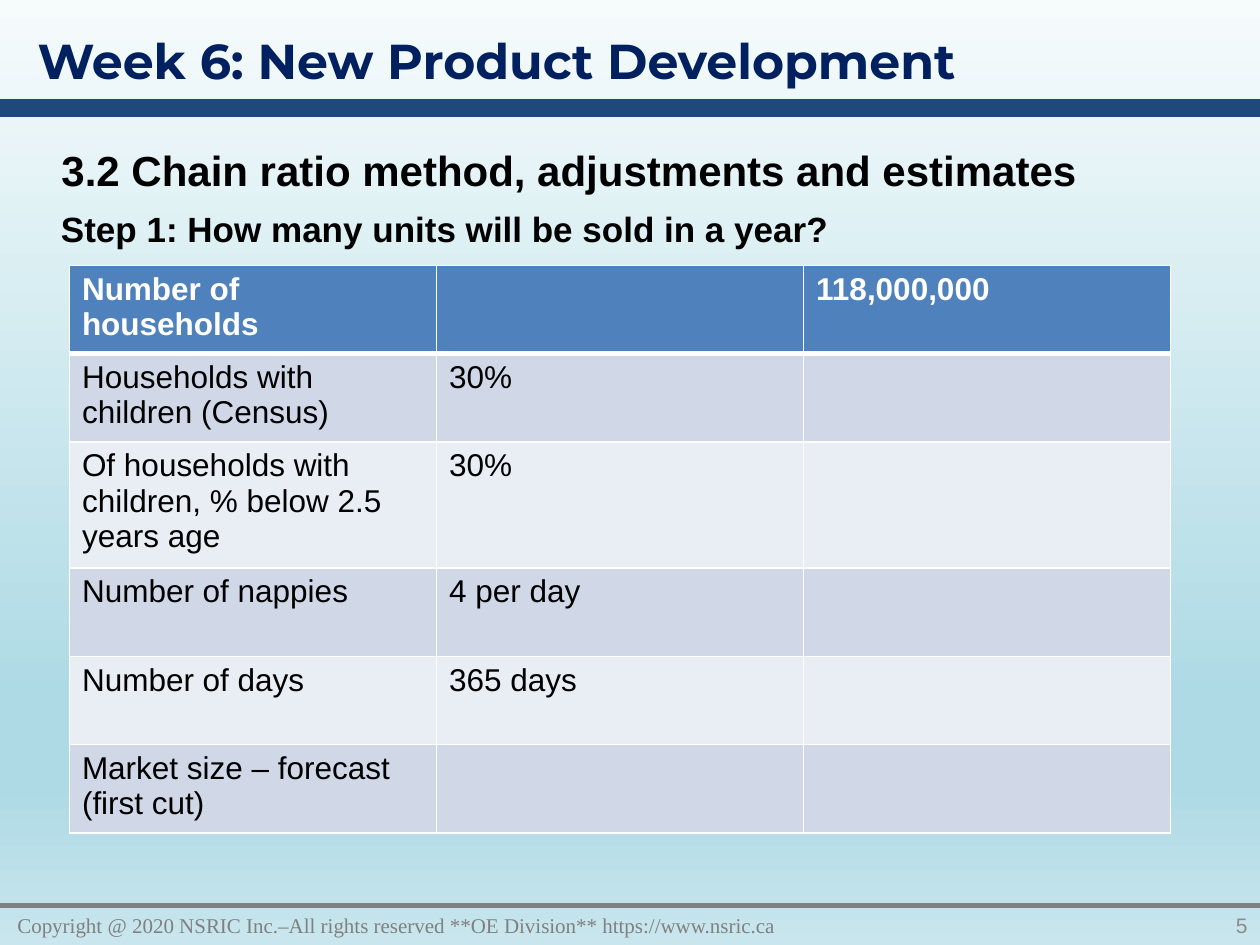
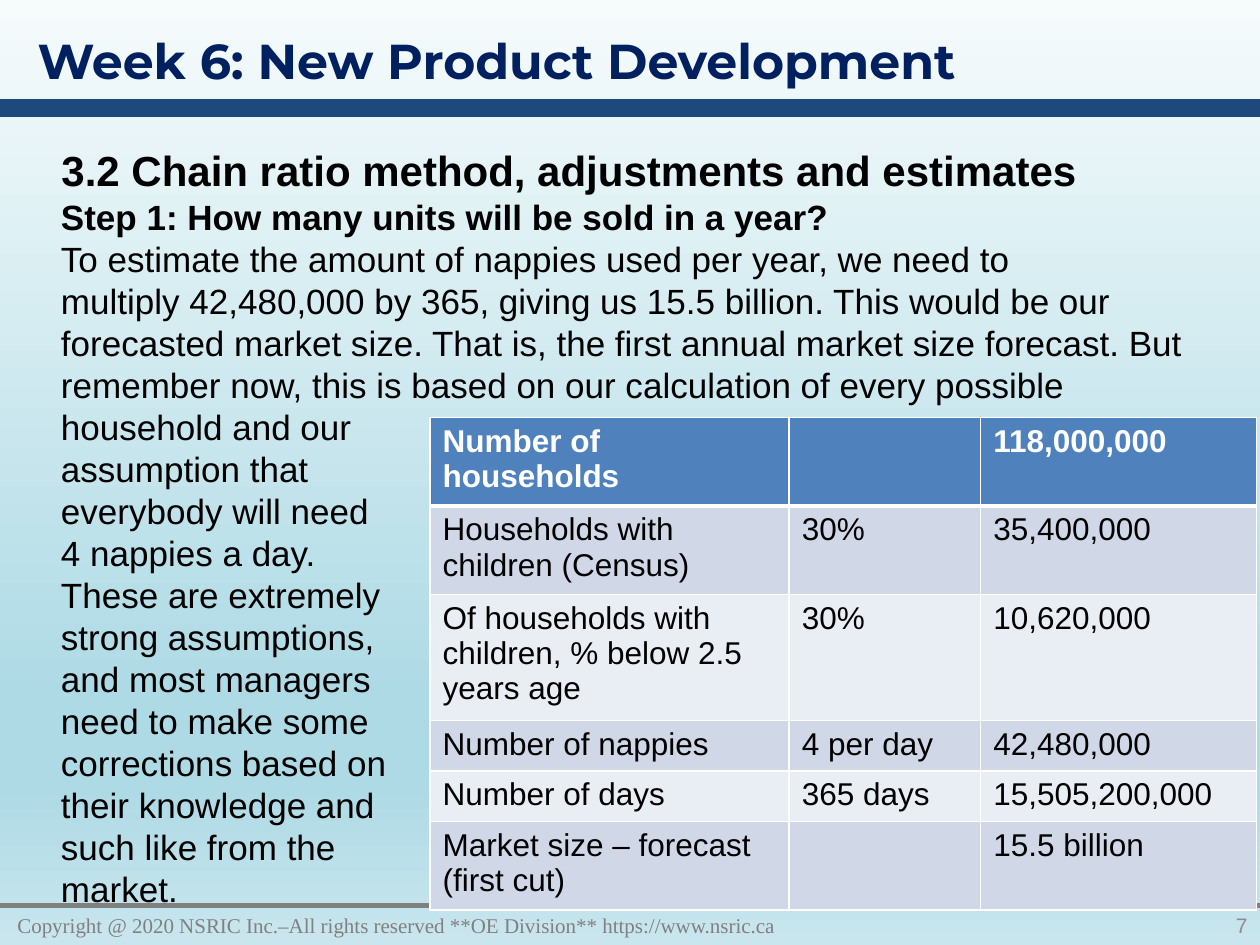
from lxml import etree
from pptx import Presentation
from pptx import util as u
from pptx.dml.color import RGBColor
from pptx.enum import shapes, text
from pptx.oxml import ns

HUES = {
    "navy": "002060", "band": "1F497D", "gray": "808080", "page": "8C8C8C",
    "black": "000000", "white": "FFFFFF", "head": "4F81BD",
    "odd": "D0D8E8", "even": "E9EDF4",
}
SKY = [(0, "F6FBFC"), (74, "AEDAE5"), (83, "AEDAE5"), (100, "C9E6EE")]
FORMS = {
    "title": {"name": "Montserrat", "size": u.Pt(28), "bold": True, "color": "navy"},
    "topic": {"name": "Arial", "size": u.Pt(24), "bold": True, "color": "black"},
    "step": {"name": "Arial", "size": u.Pt(20), "bold": True, "color": "black"},
    "body": {"name": "Arial", "size": u.Pt(20), "bold": False, "color": "black"},
    "head": {"name": "Arial", "size": u.Pt(18), "bold": True, "color": "white"},
    "cell": {"name": "Arial", "size": u.Pt(18), "bold": False, "color": "black"},
    "foot": {"name": "Times New Roman", "size": u.Pt(12), "color": "gray"},
    "page": {"name": "Arial", "size": u.Pt(12), "color": "page"},
}
LABELS = [
    "Number of households",
    "Households with children (Census)",
    "Of households with children, % below 2.5 years age",
    "Number of nappies",
    "Number of days",
    "Market size – forecast (first cut)",
]
RATES = ["", "30%", "30%", "4 per day", "365 days", ""]
TOTALS = ["118,000,000", "35,400,000", "10,620,000", "42,480,000",
          "15,505,200,000", "15.5 billion"]
STEP = "Step 1: How many units will be sold in a year?"
BOND = chr(160)
NOTES = [
    "To estimate the amount of nappies used per year, we need to "
    f"multiply{BOND}42,480,000 by 365, giving us 15.5 billion. This would be our "
    f"forecasted{BOND}market size. That is, the first annual market size forecast. "
    f"But remember{BOND}now, this is based on our calculation of every possible "
    "household and our",
    "assumption that",
    "everybody will need",
    "4 nappies a day.",
    "These are extremely",
    "strong assumptions,",
    "and most managers",
    "need to make some",
    "corrections based on",
    "their knowledge and",
    "such like from the",
    "market.",
]


def rgb(hue):
    return RGBColor.from_string(HUES[hue])


def add(node, tag, **attrs):
    return etree.SubElement(node, ns.qn(tag), attrs)


class Deck:
    def __init__(self):
        self.show = Presentation()
        self.show.slide_width = u.Cm(25.4)
        self.show.slide_height = u.Cm(19.05)
        self.slide = None

    def start(self, page):
        self.slide = self.show.slides.add_slide(self.show.slide_layouts[6])
        self.sky()
        self.line(2.18, "band", 10)
        self.line(18.26, "gray", 3)
        self.text((0.1, 18.26, 21.01, 0.79),
                  [("Copyright @ 2020 NSRIC Inc.–All rights reserved "
                    "**OE Division** https://www.nsric.ca", "foot")],
                  anchor=text.MSO_ANCHOR.MIDDLE)
        self.text((21.82, 18.26, 3.58, 0.79), [(page, "page")],
                  anchor=text.MSO_ANCHOR.MIDDLE, align=text.PP_ALIGN.RIGHT)
        self.text((0.51, 0.5, 22.25, 1.45),
                  [("Week 6: New Product Development", "title")])
        self.text((0.99, 2.79, 23.24, 1.27),
                  [("3.2 Chain ratio method, adjustments and estimates", "topic")])

    def sky(self):
        fill = self.slide.background.fill
        fill.gradient()
        fill.gradient_angle = 270
        stops = next(self.slide.element.iter(ns.qn("a:gsLst")))
        for stop in list(stops):
            stops.remove(stop)
        for spot, hue in SKY:
            add(add(stops, "a:gs", pos=str(spot * 1000)), "a:srgbClr", val=hue)

    def line(self, y, hue, width):
        line = self.slide.shapes.add_connector(
            shapes.MSO_CONNECTOR.STRAIGHT, 0, u.Cm(y), u.Cm(25.4), u.Cm(y))
        line.line.color.rgb = rgb(hue)
        line.line.width = u.Pt(width)
        add(line.element.spPr, "a:effectLst")

    def style(self, font, form):
        for key, value in FORMS[form].items():
            if key == "color":
                font.color.rgb = rgb(value)
            else:
                setattr(font, key, value)

    def text(self, box, paras, anchor=text.MSO_ANCHOR.TOP, align=None, space=None):
        frame = self.slide.shapes.add_textbox(*map(u.Cm, box)).text_frame
        frame.word_wrap = True
        frame.vertical_anchor = anchor
        for i, (words, form) in enumerate(paras):
            para = frame.add_paragraph() if i else frame.paragraphs[0]
            para.alignment = align
            para.line_spacing = space
            run = para.add_run()
            run.text = words
            self.style(run.font, form)

    def edge(self, cell, base):
        props = cell._tc.get_or_add_tcPr()
        for side, width in zip("LRTB", (1, 1, 1, base)):
            line = add(props, f"a:ln{side}", w=str(u.Pt(width)))
            add(add(line, "a:solidFill"), "a:srgbClr", val=HUES["white"])

    def table(self, x, y, cols, rows, data):
        grid = self.slide.shapes.add_table(
            len(rows), len(cols), u.Cm(x), u.Cm(y),
            u.Cm(sum(cols)), u.Cm(sum(rows))).table
        for col, width in zip(grid.columns, cols):
            col.width = u.Cm(width)
        for i, (row, high, words) in enumerate(zip(grid.rows, rows, data)):
            row.height = u.Cm(high)
            hue = ("odd" if i % 2 else "even") if i else "head"
            for cell, word in zip(row.cells, words):
                self.edge(cell, 1 if i else 3)
                cell.fill.solid()
                cell.fill.fore_color.rgb = rgb(hue)
                cell.text = word
                self.style(cell.text_frame.paragraphs[0].font,
                           "cell" if i else "head")


def main():
    deck = Deck()
    tall, deep, low = 1.78, 2.54, 1.02

    deck.start("5")
    deck.text((0.98, 4.06, 23.55, 3.68), [(STEP, "step")])
    blanks = TOTALS[:1] + [""] * 5
    deck.table(1.4, 5.35, [7.4] * 3, [tall, tall, deep, tall, tall, tall],
               zip(LABELS, RATES, blanks))

    deck.start("7")
    deck.text((0.98, 3.81, 23.57, 14.73),
              [(STEP, "step")] + [(note, "body") for note in NOTES],
              space=u.Pt(24))
    deck.table(8.67, 8.42, [7.24, 3.86, 5.56],
               [tall, tall, deep, low, low, tall],
               zip(LABELS, RATES, TOTALS))

    deck.show.save("out.pptx")


if __name__ == "__main__":
    main()
